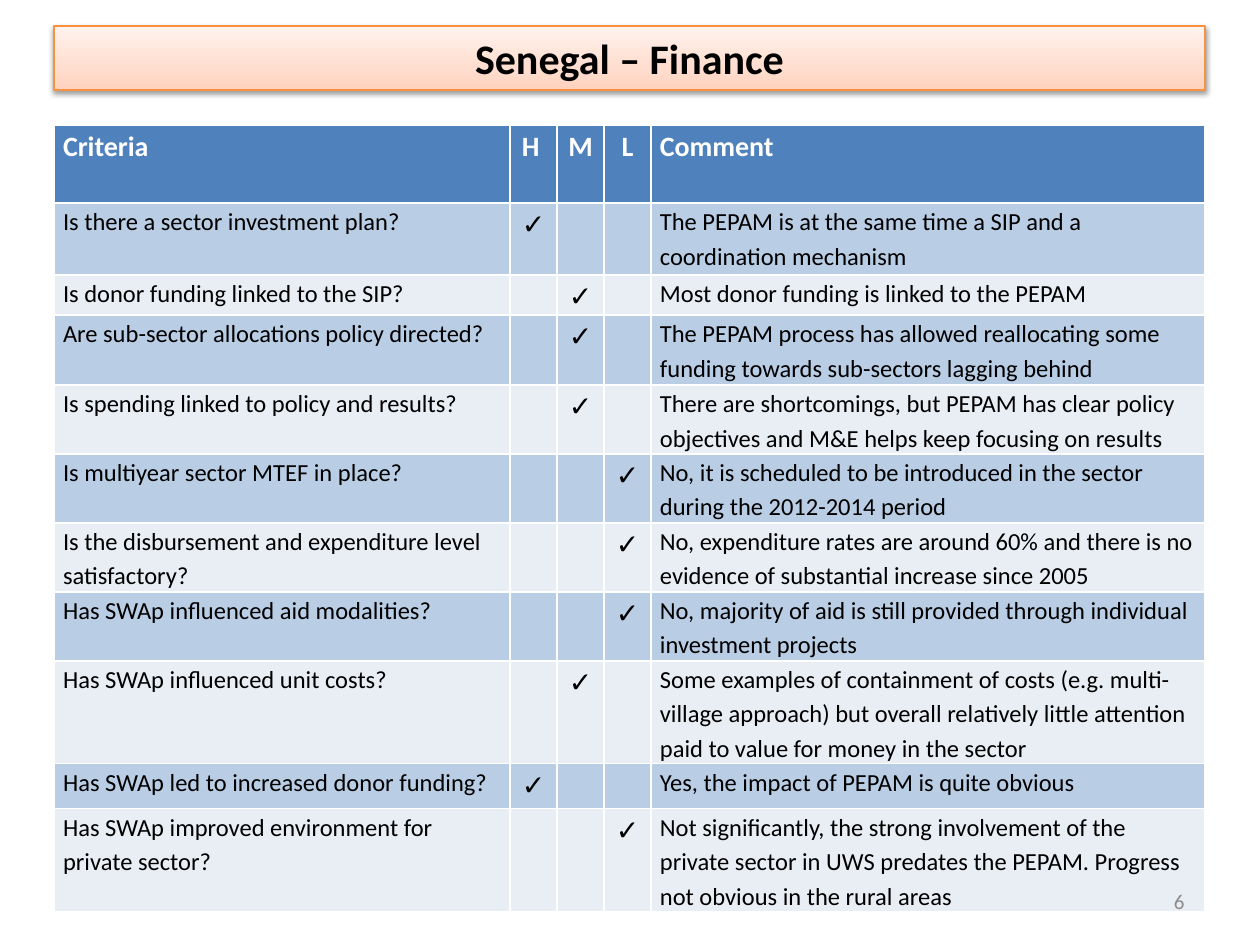
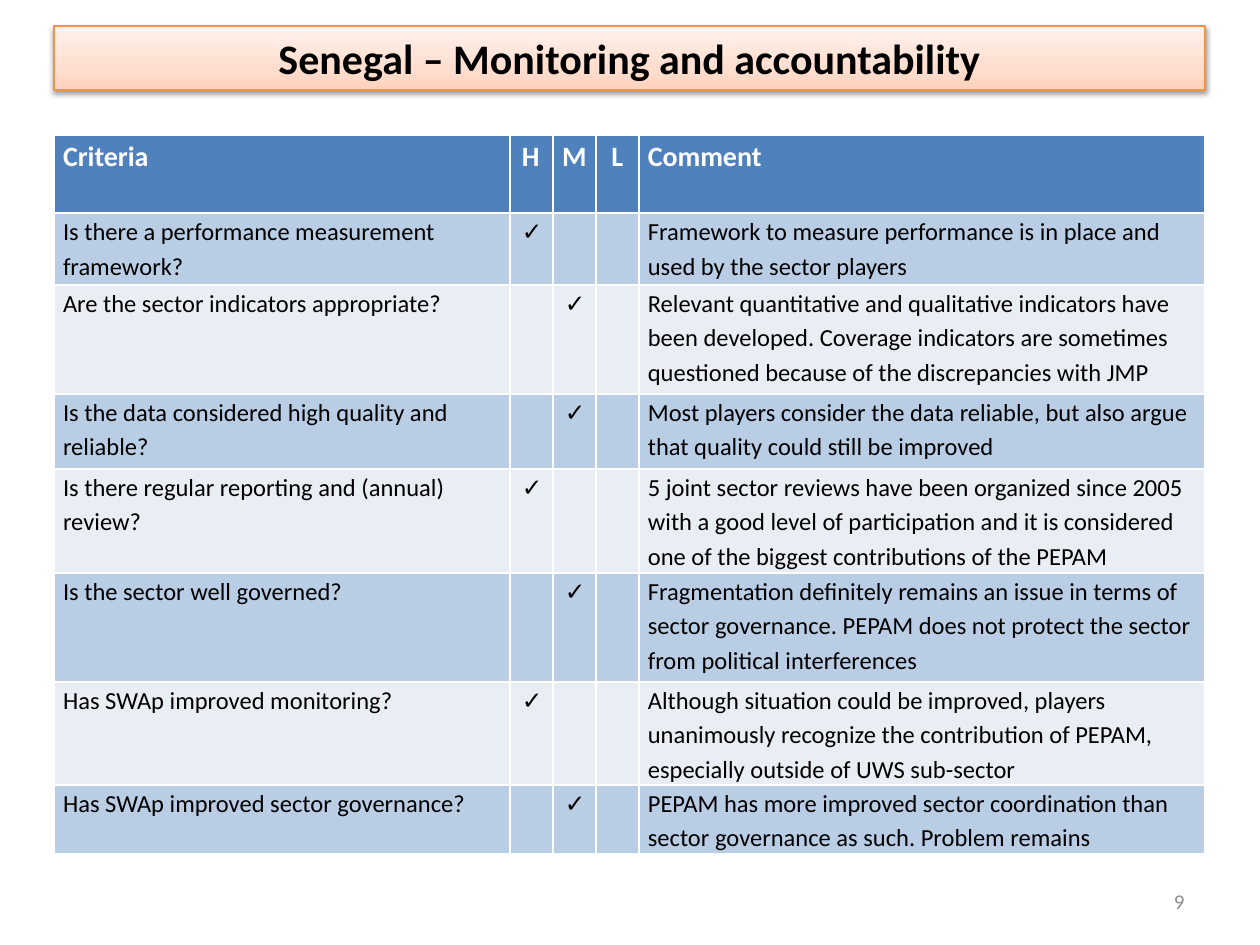
import pptx
import pptx.util
import pptx.dml.color
import pptx.enum.text
import pptx.oxml

SCALE = 914400 // 126
FONT = "Calibri"
COLORS = {
    "head": "4F81BD",
    "odd": "B9CDE5",
    "even": "E9EDF4",
    "white": "FFFFFF",
    "black": "000000",
    "gray": "8C8C8C",
    "edge": "F69240",
    "deep": "FFD2BD",
    "mid": "FFDED0",
    "pale": "FFF2ED",
}
LEFT, WIDTH = 54, 1151
ASK = 456
INSET = 9
INDENT = 3
CENTER = pptx.enum.text.PP_ALIGN.CENTER
RIGHT = pptx.enum.text.PP_ALIGN.RIGHT
MIDDLE = pptx.enum.text.MSO_ANCHOR.MIDDLE
HEADS = ["Criteria", "H", "M", "L", "Comment"]
SPACE = 'xmlns:a="http://schemas.openxmlformats.org/drawingml/2006/main"'

FINANCE = [
    (72, "Is there a sector investment plan?", "H",
     "The PEPAM is at the same time a SIP and a coordination mechanism"),
    (40, "Is donor funding linked to the SIP?", "M",
     "Most donor funding is linked to the PEPAM"),
    (70, "Are sub-sector allocations policy directed?", "M",
     "The PEPAM process has allowed reallocating some funding towards sub-sectors lagging behind"),
    (69, "Is spending linked to policy and results?", "M",
     "There are shortcomings, but PEPAM has clear policy objectives and M&E helps keep focusing on results"),
    (69, "Is multiyear sector MTEF in place?", "L",
     "No, it is scheduled to be introduced in the sector during the 2012-2014 period"),
    (69, "Is the disbursement and expenditure level satisfactory?", "L",
     "No, expenditure rates are around 60% and there is no evidence of substantial increase since 2005"),
    (69, "Has SWAp influenced aid modalities?", "L",
     "No, majority of aid is still provided through individual investment projects"),
    (103, "Has SWAp influenced unit costs?", "M",
     "Some examples of containment of costs (e.g. multi-village approach) but overall relatively "
     "little attention paid to value for money in the sector"),
    (45, "Has SWAp led to increased donor funding?", "H",
     "Yes, the impact of PEPAM is quite obvious"),
    (103, "Has SWAp improved environment for private sector?", "L",
     "Not significantly, the strong involvement of the private sector in UWS predates the PEPAM. "
     "Progress not obvious in the rural areas"),
]
MONITOR = [
    (72, "Is there a performance measurement framework?", "H",
     "Framework to measure performance is in place and used by the sector players"),
    (109, "Are the sector indicators appropriate?", "M",
     "Relevant quantitative and qualitative indicators have been developed. Coverage indicators are "
     "sometimes questioned because of the discrepancies with JMP"),
    (75, "Is the data considered high quality and reliable?", "M",
     "Most players consider the data reliable, but also argue that quality could still be improved"),
    (104, "Is there regular reporting and (annual) review?", "H",
     "5 joint sector reviews have been organized since 2005 with a good level of participation and "
     "it is considered one of the biggest contributions of the PEPAM"),
    (109, "Is the sector well governed?", "M",
     "Fragmentation definitely remains an issue in terms of sector governance. PEPAM does not "
     "protect the sector from political interferences"),
    (103, "Has SWAp improved monitoring?", "H",
     "Although situation could be improved, players unanimously recognize the contribution of "
     "PEPAM, especially outside of UWS sub-sector"),
    (69, "Has SWAp improved sector governance?", "M",
     "PEPAM has more improved sector coordination than sector governance as such. Problem remains"),
]


def px(count):
    return pptx.util.Emu(count * SCALE)


def tint(name):
    return pptx.dml.color.RGBColor.from_string(COLORS[name])


def place(shape, left, top, width, height):
    shape.left, shape.top = px(left), px(top)
    shape.width, shape.height = px(width), px(height)


def write(para, text, size, color, bold=False):
    run = para.add_run()
    run.text = text
    run.font.name = FONT
    run.font.size = pptx.util.Pt(size)
    run.font.bold = bold
    run.font.color.rgb = tint(color)


def add_title(slide, text):
    title = slide.shapes.title
    place(title, LEFT, 26, WIDTH, 64)
    stops = "".join(
        f'<a:gs pos="{spot * 1000}"><a:srgbClr val="{COLORS[name]}"/></a:gs>'
        for spot, name in [(0, "deep"), (35, "mid"), (100, "pale")])
    props = title._element.spPr
    props.append(pptx.oxml.parse_xml(
        f'<a:prstGeom {SPACE} prst="rect"><a:avLst/></a:prstGeom>'))
    props.append(pptx.oxml.parse_xml(
        f'<a:gradFill {SPACE} rotWithShape="1"><a:gsLst>{stops}</a:gsLst>'
        '<a:lin ang="16200000" scaled="1"/></a:gradFill>'))
    title.line.color.rgb = tint("edge")
    title.line.width = pptx.util.Pt(0.75)
    props.append(pptx.oxml.parse_xml(
        f'<a:effectLst {SPACE}><a:outerShdw blurRad="40000" dist="20000" dir="5400000" rotWithShape="0">'
        f'<a:srgbClr val="{COLORS["black"]}"><a:alpha val="38000"/></a:srgbClr>'
        '</a:outerShdw></a:effectLst>'))
    frame = title.text_frame
    frame.auto_size = pptx.enum.text.MSO_AUTO_SIZE.NONE
    frame.vertical_anchor = MIDDLE
    para = frame.paragraphs[0]
    para.alignment = CENTER
    write(para, text, 24, "black", True)


def fill_cell(cell, text, back, size, color, bold=False, align=None, indent=0):
    cell.fill.solid()
    cell.fill.fore_color.rgb = tint(back)
    cell.margin_left = cell.margin_right = px(INSET)
    cell.margin_top = cell.margin_bottom = 0
    if text:
        para = cell.text_frame.paragraphs[0]
        para.line_spacing = 1.15
        para.alignment = align
        if indent:
            para._p.get_or_add_pPr().set("marL", str(px(indent)))
        write(para, text, size, color, bold)


def add_grid(slide, top, mark, tick, rows):
    tall = [78] + [row[0] for row in rows]
    grid = slide.shapes.add_table(
        len(tall), len(HEADS), px(LEFT), px(top), px(WIDTH), px(sum(tall))).table
    wide = [ASK, mark, mark, mark, WIDTH - ASK - 3 * mark]
    for col, width in zip(grid.columns, wide):
        col.width = px(width)
    for row, height in zip(grid.rows, tall):
        row.height = px(height)
    for col, head in enumerate(HEADS):
        fill_cell(grid.cell(0, col), head, "head", 16, "white", True,
                  CENTER if head in "ML" else None, INDENT if head == "H" else 0)
    for num, (_, ask, grade, note) in enumerate(rows, 1):
        back = "odd" if num % 2 else "even"
        fill_cell(grid.cell(num, 0), ask, back, 14, "black")
        for col in range(1, 4):
            text = "✓" if HEADS[col] == grade else ""
            fill_cell(grid.cell(num, col), text, back, tick, "black", indent=INDENT)
        fill_cell(grid.cell(num, 4), note, back, 14, "black")


def add_number(slide, number):
    box = slide.shapes.add_textbox(px(903), px(876), px(294), px(50))
    frame = box.text_frame
    frame.word_wrap = True
    frame.vertical_anchor = MIDDLE
    para = frame.paragraphs[0]
    para.alignment = RIGHT
    write(para, number, 12, "gray")


def main():
    deck = pptx.Presentation()
    deck.slide_width, deck.slide_height = px(1260), px(945)
    pages = [
        ("Senegal – Finance", "6", 125, 47, 16, FINANCE),
        ("Senegal – Monitoring and accountability", "9", 135, 43, 14, MONITOR),
    ]
    for title, number, top, mark, tick, rows in pages:
        slide = deck.slides.add_slide(deck.slide_layouts[5])
        add_grid(slide, top, mark, tick, rows)
        add_title(slide, title)
        add_number(slide, number)
    deck.save("out.pptx")


if __name__ == "__main__":
    main()
